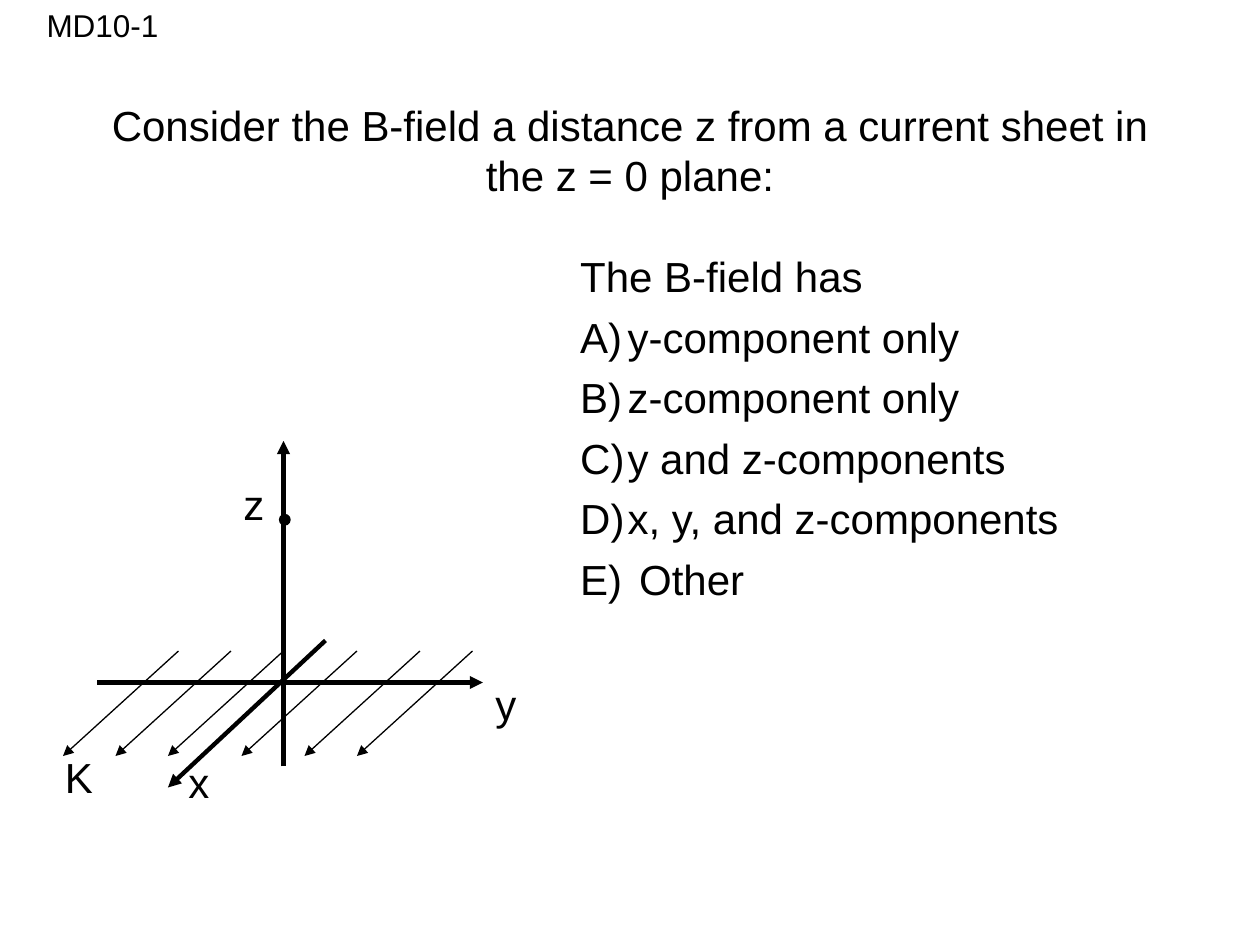
from dataclasses import dataclass

from lxml.etree import SubElement
from pptx import Presentation
from pptx.dml.color import RGBColor
from pptx.enum.shapes import MSO_CONNECTOR as Connector, MSO_SHAPE as Shape
from pptx.enum.text import MSO_ANCHOR as Anchor, MSO_AUTO_SIZE as AutoSize, PP_ALIGN as Align
from pptx.oxml.ns import qn
from pptx.util import Pt


@dataclass(frozen=True)
class Theme:
    ink: RGBColor = RGBColor(0, 0, 0)
    font: str = "Arial"
    body: int = 24
    tag: int = 18
    axis: float = 2.5
    thin: float = 0.75


theme = Theme()


def write(paragraph, text, size=theme.body, align=Align.LEFT, spacing=None, indent=0, numbered=False):
    run = paragraph.add_run()
    run.text = text
    run.font.size = Pt(size)
    run.font.name = theme.font
    run.font.color.rgb = theme.ink
    paragraph.alignment = align
    paragraph.line_spacing = spacing
    if indent:
        properties = paragraph._p.get_or_add_pPr()
        properties.set("marL", str(Pt(indent)))
        properties.set("indent", str(-Pt(indent)))
        if numbered:
            SubElement(properties, qn("a:buFont"), typeface=theme.font)
            SubElement(properties, qn("a:buAutoNum"), type="alphaUcParenR")


def draw_arrow(start, end, width):
    arrow = slide.shapes.add_connector(Connector.STRAIGHT, *map(Pt, start + end))
    arrow.line.color.rgb = theme.ink
    arrow.line.width = Pt(width)
    SubElement(arrow.line._get_or_add_ln(), qn("a:tailEnd"), type="triangle")
    SubElement(arrow._element.spPr, qn("a:effectLst"))


deck = Presentation()
deck.slide_width, deck.slide_height = Pt(720), Pt(540)
slide = deck.slides.add_slide(deck.slide_layouts[5])

question = slide.shapes.title
question.left, question.top, question.width, question.height = Pt(54), Pt(40.5), Pt(612), Pt(90)
question.text_frame.vertical_anchor = Anchor.MIDDLE
write(
    question.text_frame.paragraphs[0],
    "Consider the B-field a distance z from a current sheet in the z = 0 plane:",
    align=Align.CENTER,
)

axes = [
    ((55.5, 390), (276, 390)),
    ((186, 366), (96, 450)),
    ((162, 438), (162, 252)),
]
for start, end in axes:
    draw_arrow(start, end, theme.axis)

for current_x in (102, 132, 162, 204, 240, 270):
    draw_arrow((current_x, 372), (current_x - 66, 432), theme.thin)

field_point = slide.shapes.add_shape(Shape.OVAL, Pt(159.75), Pt(294), Pt(6), Pt(6))
field_point.shadow.inherit = False
field_point.fill.solid()
field_point.fill.fore_color.rgb = theme.ink
field_point.line.color.rgb = theme.ink
field_point.line.width = Pt(theme.thin)

labels = [
    ("x", 100.5, 429, 27, 36, theme.body),
    ("y", 276, 384, 27, 36, theme.body),
    ("z", 132, 270, 27, 36, theme.body),
    ("K", 30, 426, 30, 36, theme.body),
    ("MD10-1", 19.5, 0, 78.5, 29, theme.tag),
]
for text, left, top, width, height, size in labels:
    label = slide.shapes.add_textbox(Pt(left), Pt(top), Pt(width), Pt(height)).text_frame
    label.word_wrap = False
    label.auto_size = AutoSize.SHAPE_TO_FIT_TEXT
    write(label.paragraphs[0], text, size=size)

answers = slide.shapes.add_textbox(Pt(324.5), Pt(134), Pt(335), Pt(268)).text_frame
answers.word_wrap = True
write(answers.paragraphs[0], "The B-field has", spacing=1.2, indent=27)
for choice in (
    "y-component only",
    "z-component only",
    "y and z-components",
    "x, y, and z-components",
    " Other",
):
    write(answers.add_paragraph(), choice, spacing=1.2, indent=27, numbered=True)

deck.save("out.pptx")
